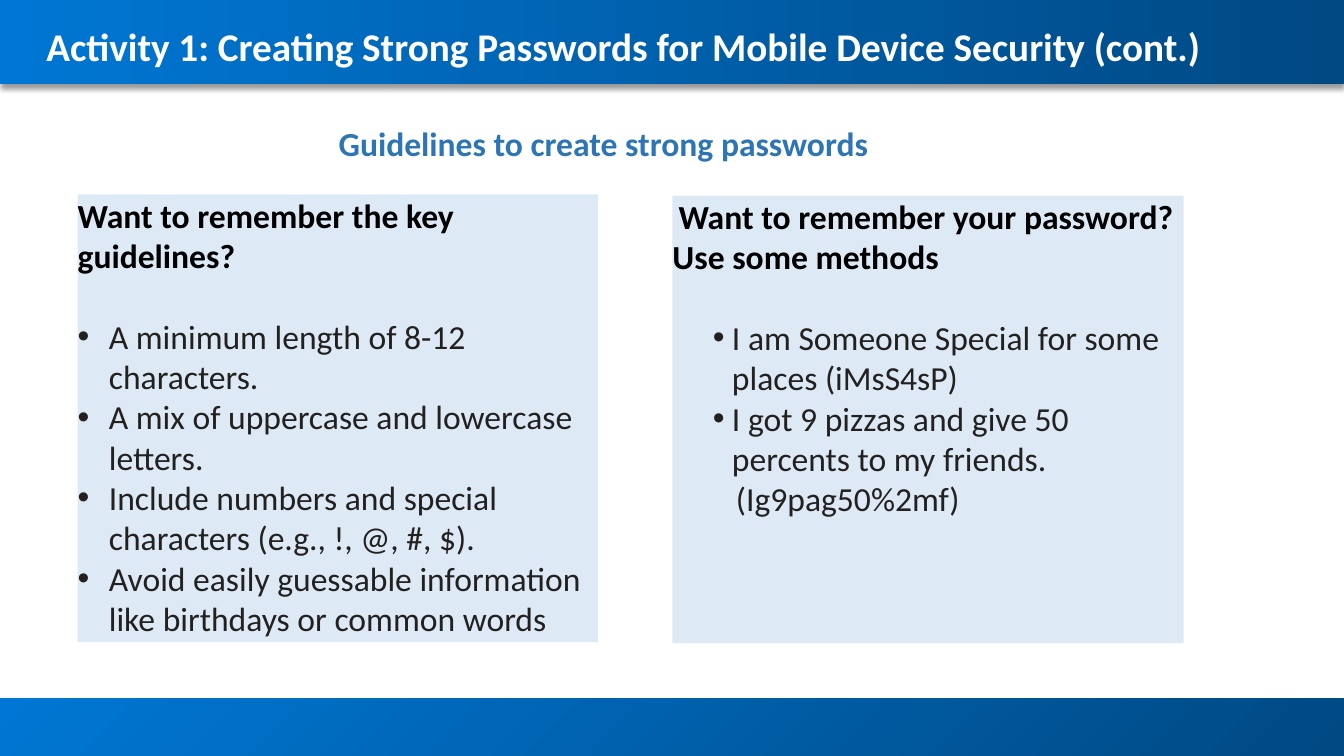
from dataclasses import dataclass

from lxml import etree
from pptx import Presentation
from pptx.dml.color import RGBColor
from pptx.enum import shapes, text
from pptx.oxml import ns
from pptx.util import Inches, Pt


@dataclass(frozen=True)
class Theme:
    font: str = "Calibri"
    bright: str = "0077D4"
    deep: str = "004983"
    panel: str = "DDEAF6"
    accent: str = "2E75B5"
    head: str = "000000"
    body: str = "232020"
    white: str = "FFFFFF"
    big: int = 28
    mid: int = 24


def rgb(code):
    return RGBColor.from_string(code)


def sub(parent, tag, **attrs):
    return etree.SubElement(parent, ns.qn(tag), attrs)


class Deck:
    def __init__(self, theme):
        self.theme = theme
        self.prs = Presentation()
        self.prs.slide_width = Inches(13.33)
        self.prs.slide_height = Inches(7.5)
        self.slide = self.prs.slides.add_slide(self.prs.slide_layouts[5])

    def style(self, para, color, size, bold=False):
        for run in para.runs:
            font = run.font
            font.name, font.size, font.bold = self.theme.font, Pt(size), bold
            font.color.rgb = rgb(color)

    def rect(self, box):
        shape = self.slide.shapes.add_shape(
            shapes.MSO_SHAPE.RECTANGLE, *map(Inches, box))
        shape.shadow.inherit = False
        shape.line.fill.background()
        return shape

    def band(self, box, colors, angle):
        shape = self.rect(box)
        shape.fill.gradient()
        shape.fill.gradient_angle = angle
        for stop, color in zip(shape.fill.gradient_stops, colors):
            stop.color.rgb = rgb(color)
        return shape

    def shade(self, shape):
        """Drop a soft black shadow straight down."""
        effects = shape.element.spPr.find(ns.qn("a:effectLst"))
        outer = sub(effects, "a:outerShdw", blurRad=str(Pt(4)), dist=str(Pt(3)),
                    dir="5400000", algn="t", rotWithShape="0")
        sub(sub(outer, "a:srgbClr", val="000000"), "a:alpha", val="40000")

    def title(self, words, box):
        shape = self.slide.shapes.title
        self.slide.shapes.element.append(shape.element)
        shape.left, shape.top, shape.width, shape.height = map(Inches, box)
        frame = self.frame(shape, 0, 0)
        frame.vertical_anchor = text.MSO_ANCHOR.MIDDLE
        frame.text = words
        para = frame.paragraphs[0]
        para.alignment = text.PP_ALIGN.LEFT
        para.line_spacing = 1.16
        self.style(para, self.theme.white, self.theme.big, True)

    def label(self, words, box):
        shape = self.slide.shapes.add_textbox(*map(Inches, box))
        frame = self.frame(shape, 0.1, 0.05)
        frame.text = words
        self.style(frame.paragraphs[0], self.theme.accent, self.theme.mid, True)

    def frame(self, shape, side, edge):
        frame = shape.text_frame
        frame.word_wrap = True
        frame.auto_size = text.MSO_AUTO_SIZE.NONE
        frame.margin_left = frame.margin_right = Inches(side)
        frame.margin_top = frame.margin_bottom = Inches(edge)
        return frame

    def indent(self, para, left, first=0):
        props = para._p.get_or_add_pPr()
        props.set("marL", str(Inches(left)))
        props.set("indent", str(Inches(first)))
        return props

    def panel(self, box, head, items, left, hang, start=0, tail=None):
        """Tinted box: bold heading, bullets, optional plain last line."""
        theme = self.theme
        shape = self.rect(box)
        shape.fill.solid()
        shape.fill.fore_color.rgb = rgb(theme.panel)
        frame = self.frame(shape, 0, 0)
        frame.vertical_anchor = text.MSO_ANCHOR.TOP
        frame.text = "\n".join([head, *items] + ([tail] if tail else []))
        first, *rest = frame.paragraphs
        first.space_after = Pt(29)
        self.indent(first, 0, start)
        self.style(first, theme.head, theme.mid, True)
        for para in rest:
            self.style(para, theme.body, theme.mid)
        for para in rest[:len(items)]:
            props = self.indent(para, left, -hang)
            sub(sub(props, "a:buClr"), "a:srgbClr", val=theme.body)
            sub(props, "a:buFont", typeface="Arial")
            sub(props, "a:buChar", char="•")
        if tail:
            self.indent(rest[-1], left + 0.04)
        for para in frame.paragraphs:
            para.alignment = text.PP_ALIGN.LEFT


def main():
    theme = Theme()
    deck = Deck(theme)
    deck.band((0, 6.93, 13.33, 0.57), (theme.deep, theme.bright), 135)
    deck.shade(deck.band((0, 0, 13.33, 0.83), (theme.bright, theme.deep), 0))
    deck.panel((6.67, 1.94, 5.07, 4.44),
               "Want to remember your password? Use some methods",
               ["I am Someone Special for some places (iMsS4sP)",
                "I got 9 pizzas and give 50 percents to my friends."],
               left=0.59, hang=0.19, start=0.06, tail="(Ig9pag50%2mf)")
    deck.panel((0.77, 1.93, 5.16, 4.44),
               "Want to remember the key guidelines?",
               ["A minimum length of 8-12 characters.",
                "A mix of uppercase and lowercase letters.",
                "Include numbers and special characters (e.g., !, @, #, $).",
                "Avoid easily guessable information like birthdays or common words"],
               left=0.31, hang=0.31)
    deck.title("Activity 1: Creating Strong Passwords for Mobile Device "
               "Security (cont.)", (0.46, 0.17, 12.41, 0.5))
    deck.label("Guidelines to create strong passwords", (3.26, 1.17, 5.92, 0.5))
    deck.prs.save("out.pptx")


if __name__ == "__main__":
    main()
